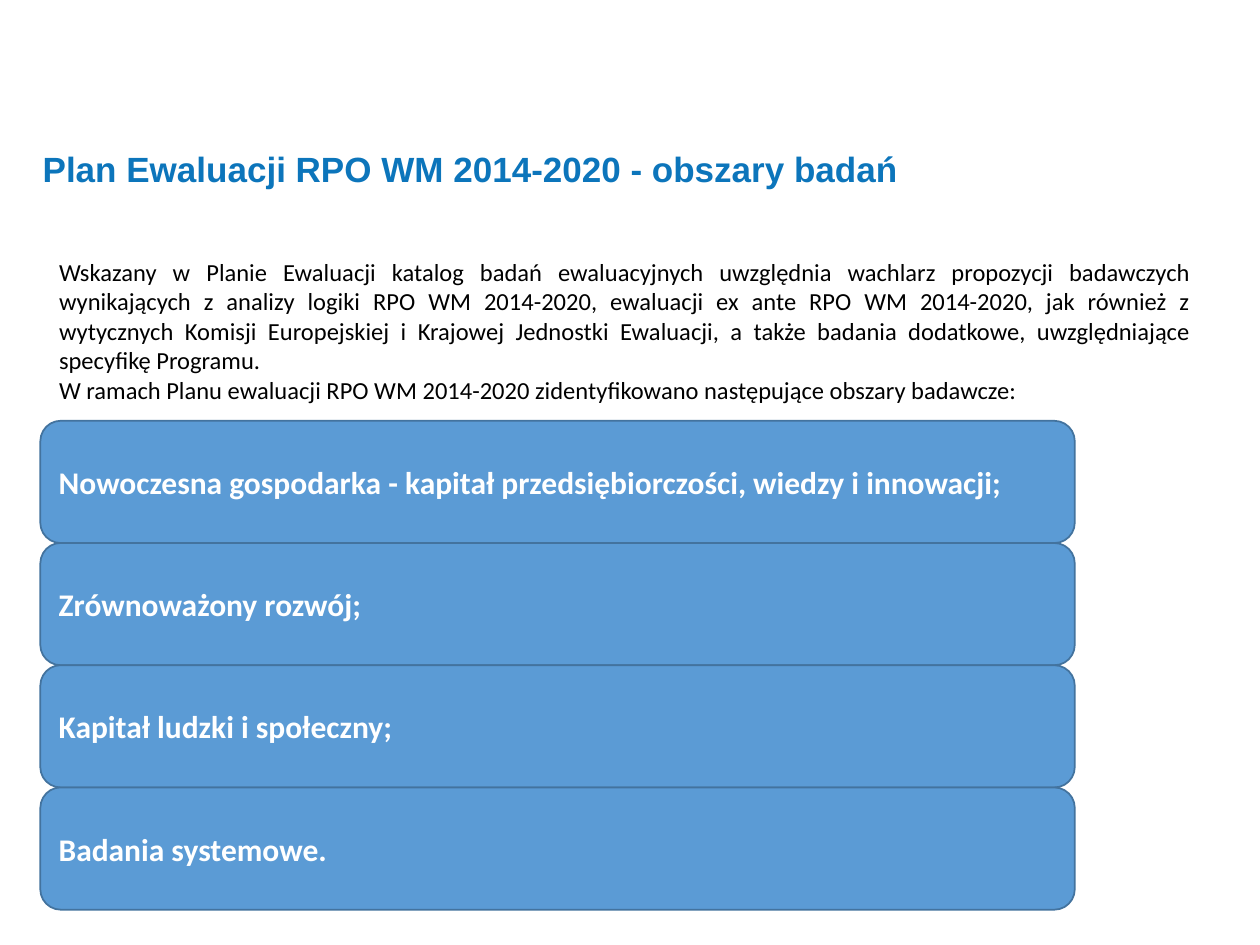
from dataclasses import dataclass

import pptx
import pptx.dml.color
import pptx.enum.shapes
import pptx.enum.text
import pptx.util
from pptx.util import Inches


@dataclass(frozen=True)
class Theme:
    title_color: str = "0C75BB"
    body_color: str = "000000"
    card_fill: str = "5B9BD5"
    card_line: str = "43739E"
    card_text: str = "FFFFFF"
    title_font: str = "Arial"
    body_font: str = "Calibri"
    title_size: int = 20
    body_size: int = 14
    card_size: int = 18


THEME = Theme()

TITLE = "Plan Ewaluacji RPO WM 2014-2020 - obszary badań"
INTRO = [
    "Wskazany w Planie Ewaluacji katalog badań ewaluacyjnych uwzględnia wachlarz "
    "propozycji badawczych wynikających z analizy logiki RPO WM 2014-2020, ewaluacji "
    "ex ante RPO WM 2014-2020, jak również z wytycznych Komisji Europejskiej i Krajowej "
    "Jednostki Ewaluacji, a także badania dodatkowe, uwzględniające specyfikę Programu.",
    "W ramach Planu ewaluacji RPO WM 2014-2020 zidentyfikowano następujące obszary badawcze:",
]
RESEARCH_AREAS = [
    "Nowoczesna gospodarka - kapitał przedsiębiorczości, wiedzy i innowacji;",
    "Zrównoważony rozwój;",
    "Kapitał ludzki i społeczny;",
    "Badania systemowe.",
]


def rgb(color):
    return pptx.dml.color.RGBColor.from_string(color)


def write_paragraphs(frame, texts, font, size, color, bold=False, align="LEFT"):
    frame.word_wrap = True
    for index, text in enumerate(texts):
        paragraph = frame.paragraphs[0] if index == 0 else frame.add_paragraph()
        paragraph.text = text
        paragraph.alignment = pptx.enum.text.PP_ALIGN[align]
        paragraph.font.name = font
        paragraph.font.size = pptx.util.Pt(size)
        paragraph.font.bold = bold
        paragraph.font.color.rgb = rgb(color)


def add_title(slide, left, top, width, height):
    frame = slide.shapes.add_textbox(left, top, width, height).text_frame
    frame.vertical_anchor = pptx.enum.text.MSO_ANCHOR.MIDDLE
    write_paragraphs(frame, [TITLE], THEME.title_font, THEME.title_size,
                     THEME.title_color, bold=True)


def add_intro(slide, left, top, width, height):
    frame = slide.shapes.add_textbox(left, top, width, height).text_frame
    write_paragraphs(frame, INTRO, THEME.body_font, THEME.body_size,
                     THEME.body_color, align="JUSTIFY")


def add_research_areas(slide, left, top, width, height):
    """Stack one card per research area, sharing the height equally."""
    card_height = height // len(RESEARCH_AREAS)
    for row, area in enumerate(RESEARCH_AREAS):
        card = slide.shapes.add_shape(
            pptx.enum.shapes.MSO_SHAPE.ROUNDED_RECTANGLE,
            left, top + row * card_height, width, card_height)
        card.shadow.inherit = False
        card.fill.solid()
        card.fill.fore_color.rgb = rgb(THEME.card_fill)
        card.line.color.rgb = rgb(THEME.card_line)
        card.line.width = pptx.util.Pt(1)
        card.text_frame.vertical_anchor = pptx.enum.text.MSO_ANCHOR.MIDDLE
        write_paragraphs(card.text_frame, [area], THEME.body_font, THEME.card_size,
                         THEME.card_text, bold=True, align="JUSTIFY")


def main():
    presentation = pptx.Presentation()
    presentation.slide_width = Inches(10)
    presentation.slide_height = Inches(7.5)
    slide = presentation.slides.add_slide(presentation.slide_layouts[6])
    add_title(slide, Inches(0.24), Inches(1.12), Inches(7.72), Inches(0.44))
    add_intro(slide, Inches(0.37), Inches(1.99), Inches(9.18), Inches(4.17))
    add_research_areas(slide, Inches(0.32), Inches(3.34), Inches(8.21), Inches(3.88))
    presentation.save("out.pptx")


if __name__ == "__main__":
    main()
